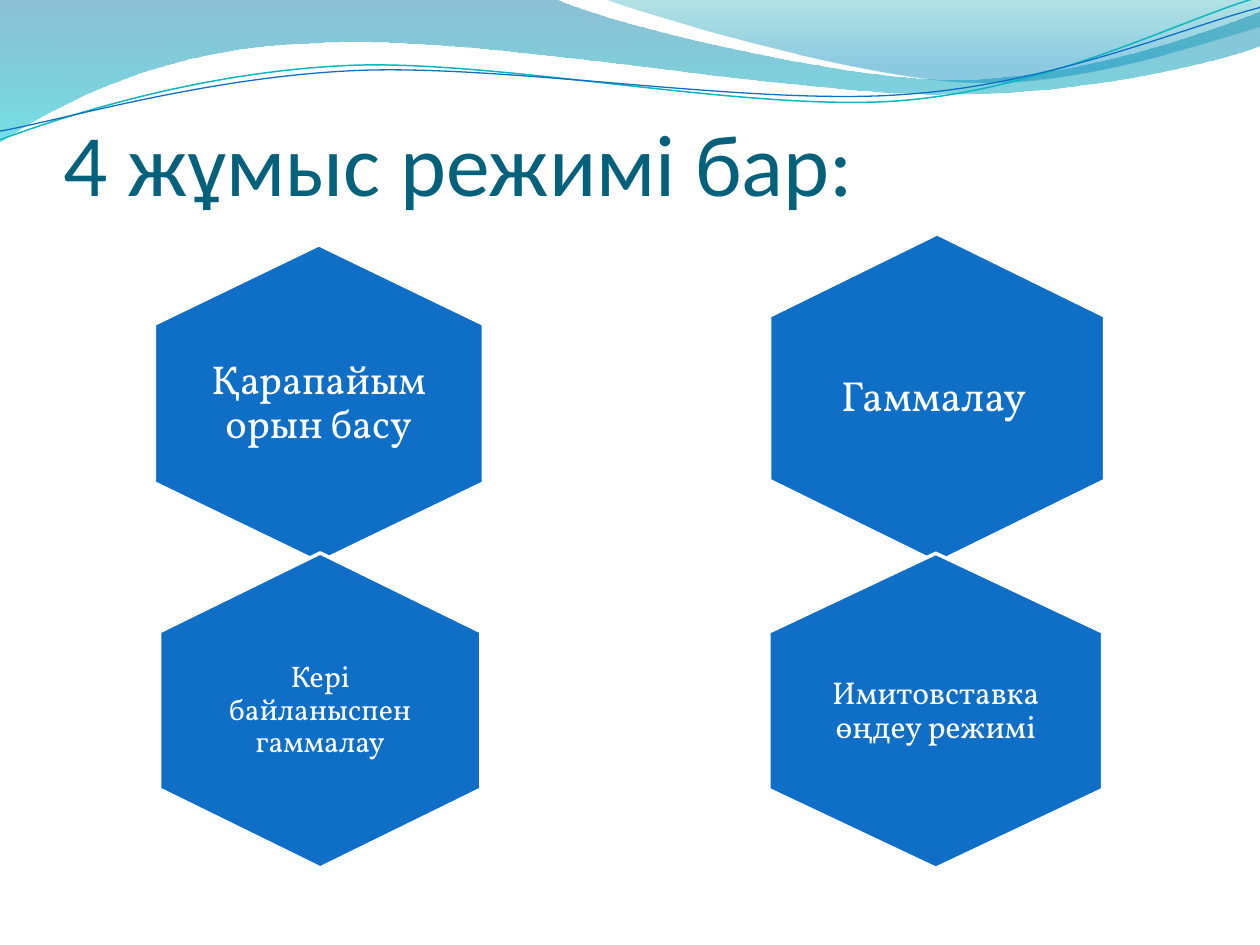
from dataclasses import dataclass
from math import cos, radians, sin

from lxml.etree import SubElement
from pptx import Presentation
from pptx.dml.color import RGBColor as RGB
from pptx.enum.shapes import MSO_SHAPE as Kind
from pptx.enum.text import MSO_ANCHOR as Anchor, MSO_AUTO_SIZE as Fit, PP_ALIGN as Align
from pptx.oxml.ns import qn
from pptx.util import Pt


@dataclass(frozen=True)
class Theme:
    """Colours, fonts and type sizes of the slide."""
    blue: str = "0F6FC6"
    teal: str = "0AB8BF"
    white: str = "FFFFFF"
    title: str = "04617B"
    head: str = "Calibri"
    body: str = "Vollkorn"
    title_size: int = 50
    mode_sizes: tuple = (24, 23, 17, 18)
    wide_wave: tuple = ((0, "0074A1", 45), (100, "00C6CF", 55))
    right_wave: tuple = ((0, "00A1A9", 30), (80, "008BBF", 45))


THEME = Theme()
TILT = 2.7

WAVES = [
    (THEME.wide_wave, (0, 0), [
        (317, -0.7), (342.7, 12.2, 478, 45.4, 545.8, 45.4),
        (614.2, 45.4, 689.8, 18.7, 720, 6.5), (720.7, 25.9),
        (707.8, 31.7, 626.4, 54.7, 537.1, 54), (447.8, 54, 275, 20.2, 185, 24.5),
        (92.9, 25.9, 33.1, 59.8, -0.7, 81.4), (0, 0)]),
    (THEME.right_wave, (344.9, -0.7), [
        (366.5, 7.9, 491, 44.6, 553.7, 46.8),
        (616.3, 49.7, 691.9, 23, 720, 15.1), (720, 0), (344.9, -0.7)]),
]

LINES = [
    (THEME.teal, 0.85, (359.3, 41.4), (0, 79.9), [
        (34.6, 67, 113.8, 41, 199.4, 37.4), (284.4, 33.8, 427, 64.1, 513.4, 57.6),
        (599.8, 51.1, 675.4, 10.8, 718.6, -1.4)]),
    (THEME.blue, 0.75, (359.6, 42.5), (0, 74.9), [
        (33.8, 69.1, 118.1, 43.9, 203.8, 40.3), (290.2, 36.7, 429.8, 60.5, 516.2, 54),
        (601.9, 48.2, 677.5, 15.1, 720, 4.3)]),
]

MODES = [
    ("Гаммалау ", (535.5, 227.6), (188, 191.5), 7.2),
    ("Қарапайым орын басу", (182.2, 230.6), (181.5, 188), 0),
    ("Кері байланыспен гаммалау", (183, 406), (180, 183.6), 5),
    ("Имитовставка өңдеу режимі", (534.7, 406.2), (180, 190.8), 0),
]


def pairs(part):
    """Split a flat run of numbers into points."""
    return list(zip(part[::2], part[1::2]))


def turn(part, mid):
    """Turn the points of a part clockwise around a centre."""
    c, s = cos(radians(TILT)), sin(radians(TILT))
    spots = [(x - mid[0], y - mid[1]) for x, y in pairs(part)]
    return tuple(v for x, y in spots for v in (mid[0] + x * c - y * s, mid[1] + x * s + y * c))


def add_curve(shapes, start, parts, close):
    """Add a freeform of straight and cubic parts without shadow."""
    pen = shapes.build_freeform(Pt(start[0]), Pt(start[1]))
    pen.add_line_segments([(Pt(part[-2]), Pt(part[-1])) for part in parts], close=close)
    shape = pen.convert_to_shape()
    shape.shadow.inherit = False
    left, top = shape.left, shape.top
    legs = list(shape.element.iter(qn("a:lnTo")))
    for leg, part in zip(legs, parts):
        if len(part) == 6:
            bend = SubElement(leg.getparent(), qn("a:cubicBezTo"))
            for x, y in pairs(part):
                SubElement(bend, qn("a:pt"), x=str(Pt(x) - left), y=str(Pt(y) - top))
            leg.getparent().replace(leg, bend)
    return shape


def add_wave(shapes, stops, start, parts):
    """Add a wave filled with a see-through gradient from top to bottom."""
    wave = add_curve(shapes, start, parts, True)
    wave.line.fill.background()
    wave.fill.gradient()
    wave.fill.gradient_angle = 270
    for stop, (place, tint, _) in zip(wave.fill.gradient_stops, stops):
        stop.position = place / 100
        stop.color.rgb = RGB.from_string(tint)
    tags = wave.element.spPr.iter(qn("a:srgbClr"))
    for tag, (_, _, alpha) in zip(tags, stops):
        SubElement(tag, qn("a:alpha"), val=str(alpha * 1000))


def add_line(shapes, tint, width, mid, start, parts):
    """Add an open curved line in a tilted frame."""
    curve = add_curve(shapes, turn(start, mid), [turn(part, mid) for part in parts], False)
    curve.rotation = 360 - TILT
    curve.fill.background()
    curve.line.color.rgb = RGB.from_string(tint)
    curve.line.width = Pt(width)


def style(frame, face, size, tint, align):
    """Format the first paragraph of a text frame."""
    para = frame.paragraphs[0]
    para.alignment = align
    for run in para.runs:
        run.font.name = face
        run.font.size = Pt(size)
        run.font.color.rgb = RGB.from_string(tint)


def pad(frame, left, top, right, base):
    """Set the four insets of a text frame."""
    frame.margin_left, frame.margin_top = Pt(left), Pt(top)
    frame.margin_right, frame.margin_bottom = Pt(right), Pt(base)


def set_title(slide, text):
    """Fill the title placeholder and bring it in front of the waves."""
    title = slide.shapes.title
    title.left, title.top, title.width, title.height = Pt(36), Pt(55.4), Pt(648), Pt(67)
    frame = title.text_frame
    frame.text = text
    frame.auto_size = Fit.NONE
    frame.vertical_anchor = Anchor.BOTTOM
    pad(frame, 0, 3.6, 0, 0)
    style(frame, THEME.head, THEME.title_size, THEME.title, Align.LEFT)
    title.element.getparent().append(title.element)


def box(mid, wide, high):
    """Return left, top, width and height of a box around its centre."""
    return Pt(mid[0] - wide / 2), Pt(mid[1] - high / 2), Pt(wide), Pt(high)


def add_mode(shapes, text, mid, span, inset, size):
    """Add an upright hexagon with a label two thirds its size."""
    wide, high = span
    hexa = shapes.add_shape(Kind.HEXAGON, *box(mid, wide, high))
    hexa.rotation = 90
    hexa.shadow.inherit = False
    hexa.fill.solid()
    hexa.fill.fore_color.rgb = RGB.from_string(THEME.blue)
    hexa.line.color.rgb = RGB.from_string(THEME.white)
    hexa.line.width = Pt(2)
    label = shapes.add_textbox(*box(mid, high * 2 / 3, wide * 2 / 3))
    frame = label.text_frame
    frame.word_wrap = True
    frame.vertical_anchor = Anchor.MIDDLE
    pad(frame, inset, inset, inset, inset)
    frame.text = text
    frame.paragraphs[0].line_spacing = 0.9
    style(frame, THEME.body, size, THEME.white, Align.CENTER)


def main():
    """Build and save the slide."""
    deck = Presentation()
    deck.slide_width, deck.slide_height = Pt(720), Pt(540)
    slide = deck.slides.add_slide(deck.slide_layouts[5])
    for wave in WAVES:
        add_wave(slide.shapes, *wave)
    lines = slide.shapes.add_group_shape().shapes
    for line in LINES:
        add_line(lines, *line)
    set_title(slide, "4 жұмыс режимі бар:")
    modes = slide.shapes.add_group_shape().shapes
    for mode, size in zip(MODES, THEME.mode_sizes):
        add_mode(modes, *mode, size)
    deck.save("out.pptx")


if __name__ == "__main__":
    main()
